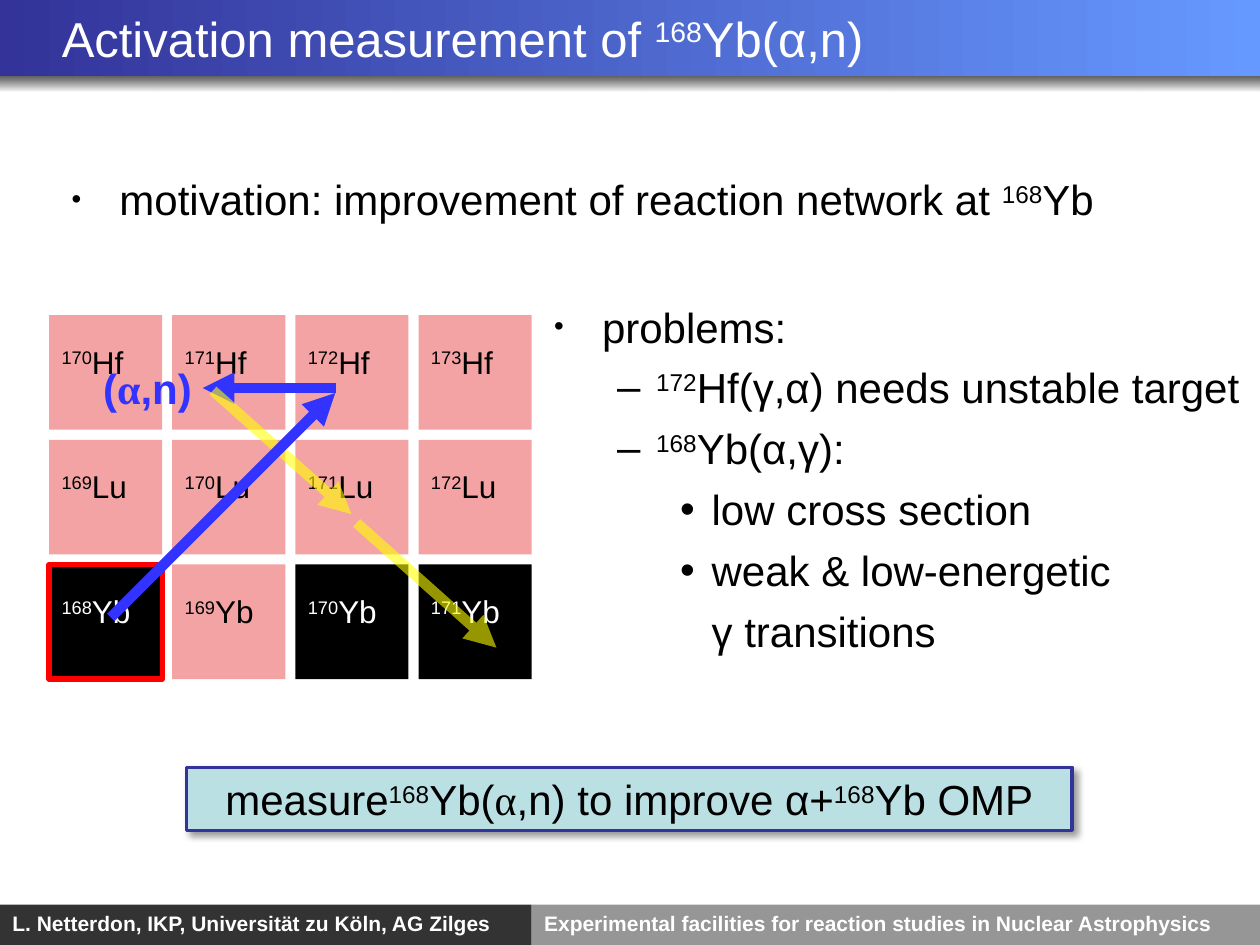
from typing import NamedTuple

from pptx import Presentation
from pptx.dml.color import RGBColor
from pptx.enum.shapes import MSO_CONNECTOR, MSO_SHAPE
from pptx.enum.text import MSO_ANCHOR, MSO_AUTO_SIZE, PP_ALIGN
from pptx.oxml.ns import qn
from pptx.util import Inches, Pt
from lxml.etree import SubElement


class Theme:
    font, symbol_font = "Arial", "Times New Roman"
    title, body, isotope, footer = Pt(28), Pt(24), Pt(18), Pt(12)
    white, black = "FFFFFF", "000000"
    navy, sky = "333399", "6699FF"
    dark_grey, mid_grey = "333333", "969696"
    unstable, stable, target = "F3A3A3", "000000", "FF0000"
    reaction, decay = "3333FF", "FFFF00"
    callout = "BBE0E3"


class Box(NamedTuple):
    left: int
    top: int
    width: int
    height: int


class Bullet(NamedTuple):
    indent: float
    hanging: float
    mark: str
    percent: int = 100


TOP = Bullet(0.38, 0.38, "•", 66)
DASH = Bullet(0.81, 0.31, "–")
DOT = Bullet(1.25, 0.25, "•")
PLAIN = Bullet(1.25, 0, "")


def box_of(left, top, width, height):
    return Box(Inches(left), Inches(top), Inches(width), Inches(height))


def rgb(value):
    return RGBColor.from_string(value)


def write(para, text, size, color, bold=False):
    """Pieces split by | are raised after ^ and set in the symbol font after ~."""
    para.font.name, para.font.size, para.font.bold = Theme.font, size, bold
    para.font.color.rgb = rgb(color)
    for piece in text.split("|"):
        span = para.add_run()
        span.text = piece.lstrip("^~")
        if piece.startswith("^"):
            span.font._element.set("baseline", "30000")
        elif piece.startswith("~"):
            span.font.name = Theme.symbol_font


def add_rect(page, box, color=None, line=None, weight=0):
    rect = page.shapes.add_shape(MSO_SHAPE.RECTANGLE, *box)
    rect.shadow.inherit = False
    if color:
        rect.fill.solid()
        rect.fill.fore_color.rgb = rgb(color)
    if line:
        rect.line.color.rgb = rgb(line)
        rect.line.width = Pt(weight)
    else:
        rect.line.fill.background()
    return rect


def add_gradient(page, box, colors, angle):
    band = add_rect(page, box)
    band.fill.gradient()
    band.fill.gradient_angle = angle
    for stop, color in zip(band.fill.gradient_stops, colors):
        stop.color.rgb = rgb(color)
    return band


def add_label(page, box, text, size, color, bold=False):
    label = page.shapes.add_textbox(*box)
    label.text_frame.word_wrap = False
    write(label.text_frame.paragraphs[0], text, size, color, bold)


def add_alpha(element, percent):
    for color in element.iter(qn("a:srgbClr")):
        SubElement(color, qn("a:alpha"), val=str(percent * 1000))


def add_header(page, box, text):
    shade = add_gradient(page, Box(box.left, Inches(0.57), box.width, Inches(0.16)),
                         (Theme.black, Theme.white), 270)
    add_alpha(next(shade._element.iter(qn("a:gs"))), 75)
    add_gradient(page, box, (Theme.navy, Theme.sky), 0)
    title = page.shapes.title
    title.left, title.top = box.left + Inches(0.39), box.top
    title.width, title.height = Inches(9), box.height
    frame = title.text_frame
    frame.auto_size = MSO_AUTO_SIZE.NONE
    frame.vertical_anchor = MSO_ANCHOR.MIDDLE
    frame.paragraphs[0].alignment = PP_ALIGN.LEFT
    write(frame.paragraphs[0], text, Theme.title, Theme.white)
    page.shapes._spTree.append(title._element)


def add_footer(page, box, author, talk):
    split = Inches(4.22)
    parts = (
        (box._replace(width=split), Theme.dark_grey, author),
        (box._replace(left=box.left + split, width=box.width - split), Theme.mid_grey, talk),
    )
    for part, color, text in parts:
        add_rect(page, part, color)
        add_label(page, part, text, Theme.footer, Theme.white, True)


def add_bullets(page, box, items):
    frame = page.shapes.add_textbox(*box).text_frame
    frame.word_wrap = True
    for index, (bullet, text) in enumerate(items):
        para = frame.paragraphs[0] if index == 0 else frame.add_paragraph()
        props = para._p.get_or_add_pPr()
        props.set("marL", str(Inches(bullet.indent)))
        props.set("indent", str(-Inches(bullet.hanging)))
        if bullet.mark:
            SubElement(props, qn("a:buSzPct"), val=str(bullet.percent * 1000))
            SubElement(props, qn("a:buFont"), typeface=Theme.font)
            SubElement(props, qn("a:buChar"), char=bullet.mark)
        else:
            SubElement(props, qn("a:buNone"))
        if index:
            para.space_before = Pt(6)
        write(para, text, Theme.body, Theme.black)


def add_arrow(page, box, start, end, color, opacity=100):
    (x1, y1), (x2, y2) = start, end
    arrow = page.shapes.add_connector(
        MSO_CONNECTOR.STRAIGHT,
        box.left + Inches(x1), box.top + Inches(y1),
        box.left + Inches(x2), box.top + Inches(y2))
    arrow.line.color.rgb = rgb(color)
    arrow.line.width = Pt(6)
    line = arrow.line._get_or_add_ln()
    if opacity < 100:
        add_alpha(line, opacity)
    SubElement(line, qn("a:tailEnd"), type="triangle")
    SubElement(arrow._element.spPr, qn("a:effectLst"))


def add_nuclide_chart(page, box):
    rows = (("Hf", 170), ("Lu", 169), ("Yb", 168))
    stable = {"168Yb", "170Yb", "171Yb"}
    columns, gap = 4, Inches(0.08)
    width = (box.width - (columns - 1) * gap) // columns
    height = (box.height - (len(rows) - 1) * gap) // len(rows)
    for row, (element, first_mass) in enumerate(rows):
        for column in range(columns):
            mass = first_mass + column
            name = f"{mass}{element}"
            is_stable = name in stable
            cell = add_rect(
                page,
                Box(box.left + column * (width + gap), box.top + row * (height + gap),
                    width, height),
                Theme.stable if is_stable else Theme.unstable,
                Theme.target if name == "168Yb" else None, 3)
            frame = cell.text_frame
            frame.vertical_anchor = MSO_ANCHOR.TOP
            frame.margin_top = Inches(0.22)
            frame.paragraphs[0].alignment = PP_ALIGN.LEFT
            write(frame.paragraphs[0], f"^{mass}|{element}", Theme.isotope,
                  Theme.white if is_stable else Theme.black)
    add_arrow(page, box, (2.28, 0.58), (1.22, 0.58), Theme.reaction)
    add_label(page, Box(box.left + Inches(0.33), box.top + Inches(0.33),
                        Inches(0.97), Inches(0.53)),
              "(|~α|,n)", Theme.body, Theme.reaction, True)
    add_arrow(page, box, (1.3, 0.6), (2.4, 1.58), Theme.decay, 59)
    add_arrow(page, box, (2.44, 1.65), (3.55, 2.64), Theme.decay, 59)
    add_arrow(page, box, (0.49, 2.4), (2.27, 0.62), Theme.reaction)


def add_callout(page, box, text):
    callout = add_rect(page, box, Theme.callout, Theme.navy, 2)
    effects = callout._element.spPr.find(qn("a:effectLst"))
    shadow = SubElement(effects, qn("a:outerShdw"), blurRad=str(Pt(4)), dist=str(Pt(3)),
                        dir=str(45 * 60000), algn="tl", rotWithShape="0")
    SubElement(shadow, qn("a:srgbClr"), val=Theme.black)
    add_alpha(shadow, 40)
    para = callout.text_frame.paragraphs[0]
    para.alignment = PP_ALIGN.CENTER
    write(para, text, Theme.body, Theme.black)


def main():
    deck = Presentation()
    deck.slide_width, deck.slide_height = Inches(10), Inches(7.5)
    page = deck.slides.add_slide(deck.slide_layouts[5])
    add_header(page, box_of(0, 0, 10, 0.6), "Activation measurement of |^168|Yb(α,n)")
    add_footer(page, box_of(0, 7.18, 10, 0.32),
               "L. Netterdon, IKP, Universität zu Köln, AG Zilges",
               "Experimental facilities for reaction studies in Nuclear Astrophysics")
    add_nuclide_chart(page, box_of(0.39, 2.5, 3.83, 2.89))
    add_bullets(page, box_of(0.47, 1.33, 9, 0.8),
                [(TOP, "motivation: improvement of reaction network at |^168|Yb")])
    add_bullets(page, box_of(4.3, 2.34, 5.7, 3.28), [
        (TOP, "problems:"),
        (DASH, "^172|Hf(γ,α) needs unstable target"),
        (DASH, "^168|Yb(α,γ):"),
        (DOT, "low cross section"),
        (DOT, "weak & low-energetic"),
        (PLAIN, "γ transitions"),
    ])
    add_callout(page, box_of(1.48, 6.09, 7.03, 0.5),
                "measure|^168|Yb(|~α|,n) to improve α+|^168|Yb OMP")
    deck.save("out.pptx")


if __name__ == "__main__":
    main()
